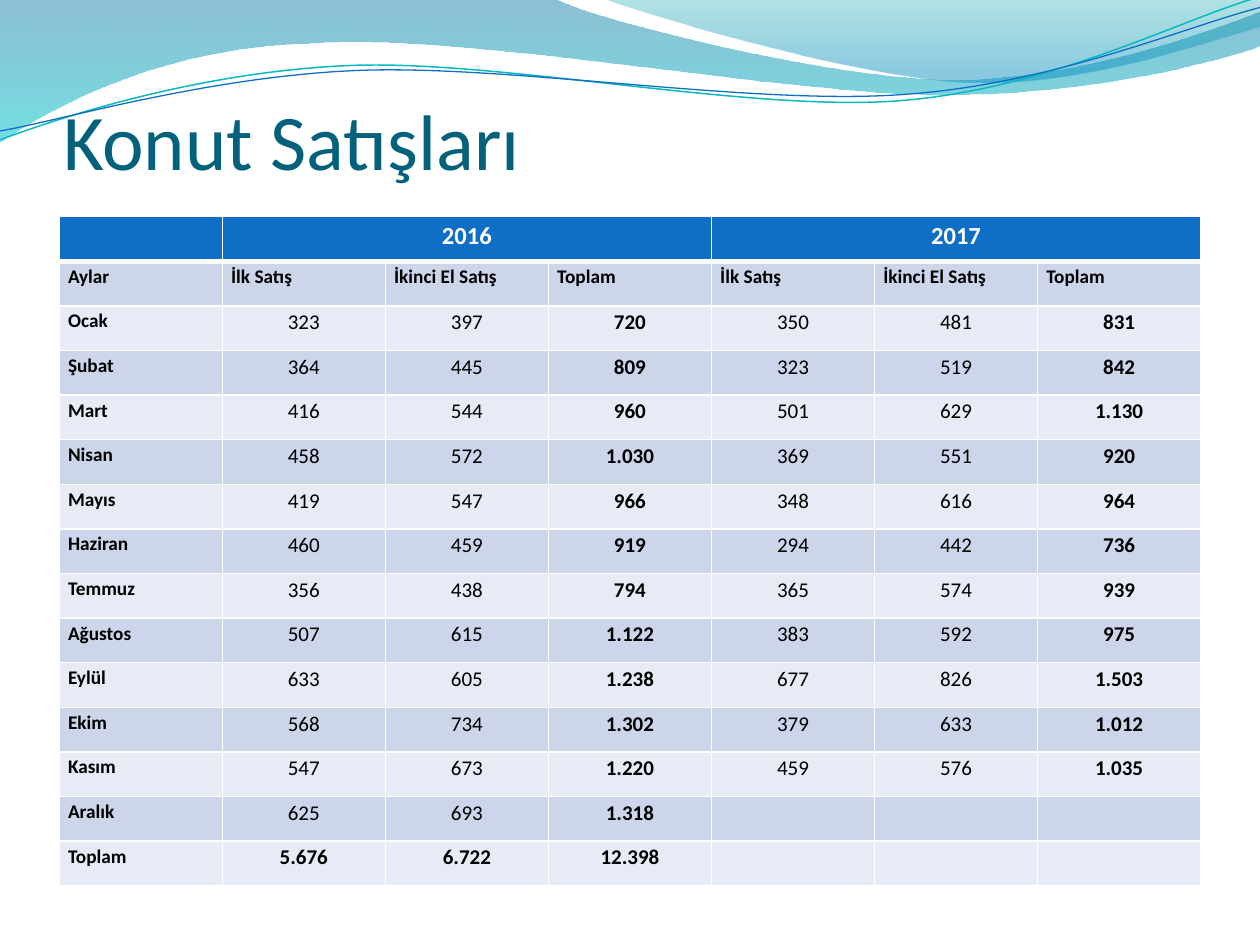
from dataclasses import dataclass
from math import cos, radians, sin
from typing import Optional

from lxml.etree import SubElement
from pptx import Presentation
from pptx.dml.color import RGBColor as RGB
from pptx.enum.text import MSO_ANCHOR as Anchor, MSO_AUTO_SIZE as AutoSize, PP_ALIGN as Align
from pptx.oxml import parse_xml
from pptx.oxml.ns import nsdecls, qn
from pptx.util import Inches, Pt


@dataclass(frozen=True)
class Theme:
    """Colours, font and type sizes of the slide."""
    font: str = "Calibri"
    title: str = "04617B"
    header: str = "0F6FC6"
    bands: tuple = ("CCD5EA", "E7EBF5")
    white: str = "FFFFFF"
    black: str = "000000"
    title_size: float = 45
    year_size: float = 14
    label_size: float = 11
    value_size: float = 12


@dataclass(frozen=True)
class Stop:
    """One gradient stop: position, colour and opacity in percent."""
    position: float
    color: str
    opacity: int


@dataclass(frozen=True)
class Wave:
    """A decorative outline: segments hold a line end or three Bézier points."""
    start: tuple
    segments: tuple
    gradient: Optional[tuple] = None
    line: Optional[str] = None
    width: float = 0
    tilt: float = 0
    pivot: tuple = (0, 0)


THEME = Theme()
WAVES = (
    Wave((0, 0), (
        (4.4, -0.01),
        (4.76, 0.17, 6.64, 0.63, 7.58, 0.63),
        (8.53, 0.63, 9.58, 0.26, 10, 0.09),
        (10.01, 0.36),
        (9.83, 0.44, 8.7, 0.76, 7.46, 0.75),
        (6.22, 0.75, 3.82, 0.28, 2.57, 0.34),
        (1.29, 0.36, 0.46, 0.83, -0.01, 1.13),
        (0, 0),
    ), gradient=(Stop(0, "0074A1", 45), Stop(1, "00C6CF", 55))),
    Wave((4.79, -0.01), (
        (5.09, 0.11, 6.82, 0.62, 7.69, 0.65),
        (8.56, 0.69, 9.61, 0.32, 10, 0.21),
        (10, 0),
        (4.79, -0.01),
    ), gradient=(Stop(0, "00A1A9", 30), Stop(0.8, "008BBF", 45))),
    Wave((0, 1.11), (
        (0.48, 0.93, 1.58, 0.57, 2.77, 0.52),
        (3.95, 0.47, 5.93, 0.89, 7.13, 0.8),
        (8.33, 0.71, 9.38, 0.15, 9.98, -0.02),
    ), line="0AB8BF", width=0.85, tilt=-2.7, pivot=(4.99, 0.58)),
    Wave((0, 1.04), (
        (0.47, 0.96, 1.64, 0.61, 2.83, 0.56),
        (4.03, 0.51, 5.97, 0.84, 7.17, 0.75),
        (8.36, 0.67, 9.41, 0.21, 10, 0.06),
    ), line="0F6FC6", width=0.75, tilt=-2.7, pivot=(5, 0.59)),
)
ROWS = (
    ("", "2016", "", "", "2017", "", ""),
    ("Aylar",) + ("İlk Satış", "İkinci El Satış", "Toplam") * 2,
    ("Ocak", "323", "397", "720", "350", "481", "831"),
    ("Şubat", "364", "445", "809", "323", "519", "842"),
    ("Mart", "416", "544", "960", "501", "629", "1.130"),
    ("Nisan", "458", "572", "1.030", "369", "551", "920"),
    ("Mayıs", "419", "547", "966", "348", "616", "964"),
    ("Haziran", "460", "459", "919", "294", "442", "736"),
    ("Temmuz", "356", "438", "794", "365", "574", "939"),
    ("Ağustos", "507", "615", "1.122", "383", "592", "975"),
    ("Eylül", "633", "605", "1.238", "677", "826", "1.503"),
    ("Ekim", "568", "734", "1.302", "379", "633", "1.012"),
    ("Kasım", "547", "673", "1.220", "459", "576", "1.035"),
    ("Aralık", "625", "693", "1.318", "", "", ""),
    ("Toplam", "5.676", "6.722", "12.398", "", "", ""),
)


def level(wave: Wave, x: float, y: float) -> tuple:
    """Return a point in EMU with the wave's tilt taken out."""
    (px, py), a = wave.pivot, radians(-wave.tilt)
    dx, dy = x - px, y - py
    return Inches(px + dx * cos(a) - dy * sin(a)), Inches(py + dx * sin(a) + dy * cos(a))


def bend(sp, segments: tuple) -> None:
    """Join each run of three straight steps into one cubic curve."""
    steps = iter(list(sp._element.iter(qn("a:lnTo"))))
    for seg in segments:
        first = next(steps)
        if len(seg) == 6:
            curve = parse_xml(f'<a:cubicBezTo {nsdecls("a")}/>')
            first.addprevious(curve)
            for step in (first, next(steps), next(steps)):
                curve.append(step[0])
                step.getparent().remove(step)


def draw_wave(shapes, wave: Wave) -> None:
    """Draw a wave as a gradient area or a thin line."""
    points = [level(wave, *seg[i:i + 2]) for seg in wave.segments for i in range(0, len(seg), 2)]
    builder = shapes.build_freeform(*level(wave, *wave.start), scale=1.0)
    builder.add_line_segments(points, close=wave.gradient is not None)
    sp = builder.convert_to_shape()
    bend(sp, wave.segments)
    sp.rotation = wave.tilt
    sp.shadow.inherit = False
    if wave.gradient:
        sp.line.fill.background()
        sp.fill.gradient()
        sp.fill.gradient_angle = 270
        for gs, stop in zip(sp.fill.gradient_stops, wave.gradient):
            gs.position = stop.position
            gs.color.rgb = RGB.from_string(stop.color)
        colors = list(sp._element.spPr.iter(qn("a:srgbClr")))
        for color, stop in zip(colors, wave.gradient):
            SubElement(color, qn("a:alpha")).set("val", str(stop.opacity * 1000))
    else:
        sp.fill.background()
        sp.line.color.rgb = RGB.from_string(wave.line)
        sp.line.width = Pt(wave.width)


def set_borders(cell, top: float, bottom: float) -> None:
    """Give a cell white borders, with its top and bottom widths in points."""
    tc_pr = cell._tc.get_or_add_tcPr()
    for i, (side, width) in enumerate((("L", 1), ("R", 1), ("T", top), ("B", bottom))):
        tc_pr.insert(i, parse_xml(
            f'<a:ln{side} {nsdecls("a")} w="{Pt(width)}"><a:solidFill>'
            f'<a:srgbClr val="{THEME.white}"/></a:solidFill></a:ln{side}>'))


def format_text(p, size: float, color: str, bold: bool = False) -> None:
    """Set the font of a paragraph."""
    p.font.name = THEME.font
    p.font.size = Pt(size)
    p.font.bold = bold
    p.font.color.rgb = RGB.from_string(color)


def fill_cell(cell, row: int, col: int, text: str) -> None:
    """Write and style one cell according to its place in the table."""
    is_year, is_label = row == 0, row == 1 or col == 0
    cell.fill.solid()
    cell.fill.fore_color.rgb = RGB.from_string(THEME.header if is_year else THEME.bands[(row - 1) % 2])
    set_borders(cell, 3 if row == 1 else 1, 3 if is_year else 1)
    cell.margin_left = cell.margin_right = Inches(0.07)
    cell.margin_top = cell.margin_bottom = 0
    if not text:
        return
    cell.text = text
    p = cell.text_frame.paragraphs[0]
    p.line_spacing = 1.15
    p.alignment = Align.CENTER if is_year or not is_label else Align.LEFT
    size = THEME.year_size if is_year else THEME.label_size if is_label else THEME.value_size
    bold = is_year or is_label or col % 3 == 0 or row == len(ROWS) - 1
    format_text(p, size, THEME.white if is_year else THEME.black, bold)


def add_sales_table(shapes) -> None:
    """Add the monthly sales table with a merged heading for each year."""
    n_rows, n_cols = len(ROWS), len(ROWS[0])
    table = shapes.add_table(n_rows, n_cols, Inches(0.47), Inches(1.72), Inches(9.06), Inches(5.31)).table
    for r, row in enumerate(ROWS):
        for c, text in enumerate(row):
            fill_cell(table.cell(r, c), r, c, text)
    for first in (1, 4):
        table.cell(0, first).merge(table.cell(0, first + 2))


def set_title(s, text: str) -> None:
    """Place and style the title in front of the waves."""
    sp = s.shapes.title
    s.shapes._spTree.append(sp._element)
    sp.left, sp.top, sp.width, sp.height = (Inches(v) for v in (0.5, 0.77, 9, 0.71))
    tf = sp.text_frame
    tf.text = text
    tf.auto_size = AutoSize.NONE
    tf.vertical_anchor = Anchor.BOTTOM
    tf.margin_left = tf.margin_right = tf.margin_bottom = 0
    tf.margin_top = Inches(0.05)
    p = tf.paragraphs[0]
    p.alignment = Align.LEFT
    format_text(p, THEME.title_size, THEME.title)


def main() -> None:
    """Build the slide and save it."""
    prs = Presentation()
    prs.slide_width, prs.slide_height = Inches(10), Inches(7.5)
    s = prs.slides.add_slide(prs.slide_layouts[5])
    for wave in WAVES:
        draw_wave(s.shapes, wave)
    set_title(s, "Konut Satışları")
    add_sales_table(s.shapes)
    prs.save("out.pptx")


if __name__ == "__main__":
    main()
